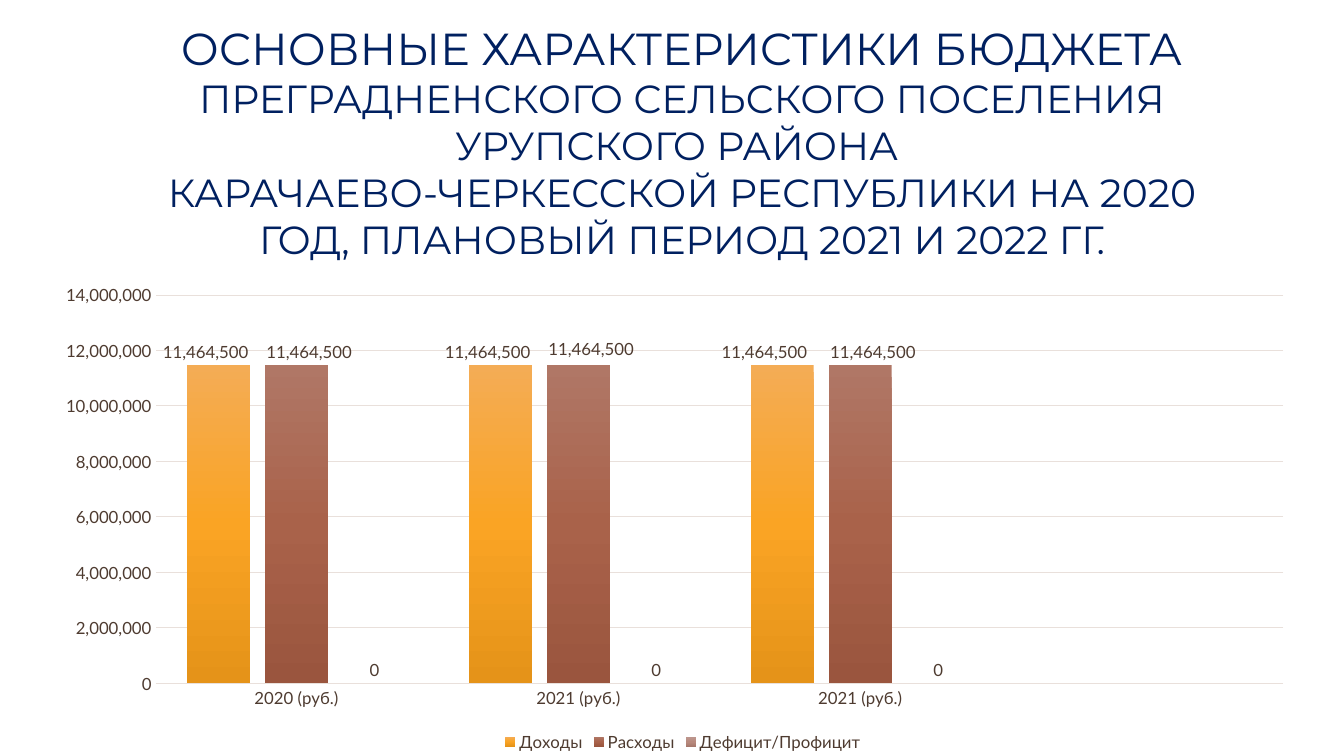
from pptx import Presentation
from pptx.chart.data import CategoryChartData
from pptx.dml.color import RGBColor
from pptx.enum.chart import (XL_CHART_TYPE, XL_LABEL_POSITION,
                             XL_LEGEND_POSITION, XL_TICK_MARK)
from pptx.enum.text import MSO_ANCHOR, PP_ALIGN
from pptx.oxml import parse_xml
from pptx.oxml.ns import nsdecls
from pptx.util import Cm, Pt

NAVY, BROWN, PALE = "002060", "4E3B30", "E9E0DB"
TITLE = [
    ("ОСНОВНЫЕ ХАРАКТЕРИСТИКИ БЮДЖЕТА", 32),
    ("ПРЕГРАДНЕНСКОГО СЕЛЬСКОГО ПОСЕЛЕНИЯ", 28),
    ("УРУПСКОГО РАЙОНА ", 28),
    ("КАРАЧАЕВО-ЧЕРКЕССКОЙ РЕСПУБЛИКИ НА 2020 ГОД, "
     "ПЛАНОВЫЙ ПЕРИОД 2021 И 2022 ГГ.", 28),
]
YEARS = ["2020 (руб.)", "2021 (руб.)", "2021 (руб.)", ""]
SUM = 11464500
# name, values, gradient from top to bottom, label shifts as chart fractions
SERIES = [
    ("Доходы", [SUM] * 3 + [None], ["F4AC55", "FAA424", "E59319"],
     [(-0.01, 0), (-0.01, 0), (-0.014, 0)]),
    ("Расходы", [SUM] * 3 + [None], ["B07766", "A9624A", "9A553E"],
     [(0.01, 0), (0.01, -0.006), (0.01, 0)]),
    ("Дефицит/Профицит", [0] * 3 + [None], ["BD988F", "B8897D", "A6786C"],
     []),
]


def color(code):
    return RGBColor.from_string(code)


def style(font, name, size, code):
    font.name, font.size = name, Pt(size)
    font.color.rgb = color(code)


def rule(line):
    line.color.rgb = color(PALE)
    line.width = Pt(0.75)


def layout(x, y, rest=""):
    """Manual chart layout; rest holds further elements."""
    inner = '<c:layoutTarget val="inner"/>' if rest else ""
    modes = '<c:xMode val="edge"/><c:yMode val="edge"/>' if rest else ""
    return parse_xml(
        f'<c:layout {nsdecls("c")}><c:manualLayout>{inner}{modes}'
        f'<c:x val="{x}"/><c:y val="{y}"/>{rest}'
        '</c:manualLayout></c:layout>')


def shade(series, codes):
    """Fill the bars with an even vertical gradient."""
    step = 100000 // (len(codes) - 1)
    stops = "".join(f'<a:gs pos="{i * step}"><a:srgbClr val="{code}"/></a:gs>'
                    for i, code in enumerate(codes))
    props = series._element.get_or_add_spPr()
    props.insert(0, parse_xml(
        f'<a:gradFill {nsdecls("a")} rotWithShape="1"><a:gsLst>{stops}</a:gsLst>'
        '<a:lin ang="5400000" scaled="0"/></a:gradFill>'))


def label(series, shifts):
    labels = series.data_labels
    labels.show_value = True
    labels.number_format = "#,##0"
    labels.number_format_is_linked = False
    labels.position = XL_LABEL_POSITION.OUTSIDE_END
    style(labels.font, "Lato", 12, BROWN)
    for i in range(len(shifts)):
        single = series.points[i].data_label
        style(single.font, "Lato", 12, BROWN)
        single.position = XL_LABEL_POSITION.OUTSIDE_END
    marks = series._element.xpath("c:dLbls/c:dLbl")
    for mark, (x, y) in zip(marks, shifts):
        mark.insert(1, layout(x, y))


def add_title(slide, left, top, width, height):
    box = slide.shapes.add_textbox(left, top, width, height)
    frame = box.text_frame
    frame.word_wrap = True
    frame.vertical_anchor = MSO_ANCHOR.MIDDLE
    para = frame.paragraphs[0]
    para.alignment = PP_ALIGN.CENTER
    for i, (text, size) in enumerate(TITLE):
        if i:
            para.add_line_break()
        run = para.add_run()
        run.text = text
        style(run.font, "Montserrat", size, NAVY)


def add_budget(slide, left, top, width, height):
    data = CategoryChartData(number_format="#,##0")
    data.categories = YEARS
    for name, values, _, _ in SERIES:
        data.add_series(name, values)
    chart = slide.shapes.add_chart(XL_CHART_TYPE.COLUMN_CLUSTERED, left, top,
                                   width, height, data).chart
    chart.has_title = False
    style(chart.font, "Lato", 10, "000000")

    chart.has_legend = True
    chart.legend.position = XL_LEGEND_POSITION.BOTTOM
    chart.legend.include_in_layout = False
    style(chart.legend.font, "Lato", 12, BROWN)

    for axis in (chart.category_axis, chart.value_axis):
        axis.major_tick_mark = axis.minor_tick_mark = XL_TICK_MARK.NONE
        style(axis.tick_labels.font, "Lato", 12, BROWN)
    rule(chart.category_axis.format.line)
    values = chart.value_axis
    values.format.line.fill.background()
    values.minimum_scale, values.maximum_scale = 0, 14000000
    values.major_unit = 2000000
    values.tick_labels.number_format = "#,##0"
    values.tick_labels.number_format_is_linked = False
    rule(values.major_gridlines.format.line)

    plot = chart.plots[0]
    plot.gap_width, plot.overlap = 100, -24
    plot.vary_by_categories = False
    for series, (_, _, codes, shifts) in zip(plot.series, SERIES):
        shade(series, codes)
        label(series, shifts)

    area = chart._chartSpace.chart.plotArea
    for old in area.xpath("c:layout"):
        area.remove(old)
    area.insert(0, layout(0.087, 0.061,
                          '<c:w val="0.883"/><c:h val="0.791"/>'))


def main():
    deck = Presentation()
    deck.slide_width, deck.slide_height = Cm(33.87), Cm(19.05)
    slide = deck.slides.add_slide(deck.slide_layouts[6])
    add_title(slide, Cm(3.28), Cm(1.73), Cm(27.81), Cm(3.68))
    add_budget(slide, Cm(1.12), Cm(6.68), Cm(32.18), Cm(12.37))
    deck.save("out.pptx")


if __name__ == "__main__":
    main()
